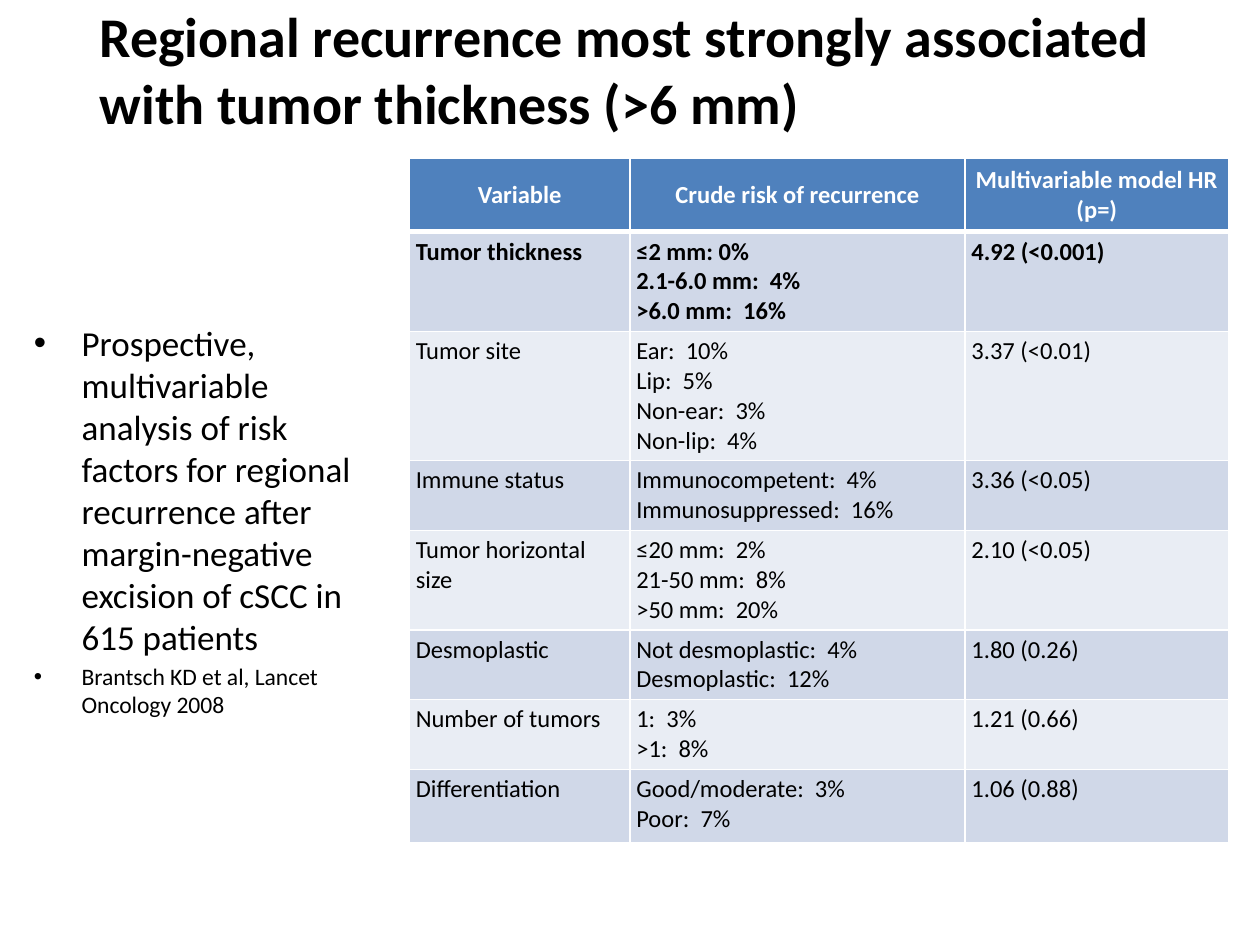
"""Build a slide on regional recurrence and its risk factors."""
from dataclasses import dataclass

from lxml.etree import SubElement
from pptx import Presentation
from pptx.dml.color import RGBColor
from pptx.enum.text import MSO_ANCHOR, MSO_AUTO_SIZE, PP_ALIGN
from pptx.oxml.ns import qn
from pptx.util import Inches, Pt


@dataclass(frozen=True)
class Theme:
    font: str = "Calibri"
    text: str = "000000"
    white: str = "FFFFFF"
    header: str = "4F81BD"
    bands: tuple = ("D0D8E8", "E9EDF4")
    title_size: float = 32
    body_size: float = 20
    citation_size: float = 13.5
    table_size: float = 14


theme = Theme()


def format_runs(paragraph, size, color=theme.text, bold=False):
    for run in paragraph.runs:
        run.font.name = theme.font
        run.font.size = Pt(size)
        run.font.bold = bold
        run.font.color.rgb = RGBColor.from_string(color)


def add_border(cell, position, side, width):
    properties = cell._tc.get_or_add_tcPr()
    line = SubElement(properties, qn(f"a:ln{side}"), w=str(Pt(width)))
    fill = SubElement(line, qn("a:solidFill"))
    SubElement(fill, qn("a:srgbClr"), val=theme.white)
    properties.insert(position, line)


presentation = Presentation()
presentation.slide_width = Inches(10)
presentation.slide_height = Inches(7.5)
slide = presentation.slides.add_slide(presentation.slide_layouts[5])

title = slide.shapes.title
title.left, title.top = Inches(0.69), Inches(0)
title.width, title.height = Inches(8.62), Inches(1.09)
title.text_frame.text = "Regional recurrence most strongly associated with tumor thickness (>6 mm)"
title.text_frame.auto_size = MSO_AUTO_SIZE.NONE
title.text_frame.vertical_anchor = MSO_ANCHOR.MIDDLE
title.text_frame.paragraphs[0].alignment = PP_ALIGN.LEFT
format_runs(title.text_frame.paragraphs[0], theme.title_size, bold=True)

rows = [
    ("Variable", "Crude risk of recurrence", "Multivariable model HR (p=)"),
    ("Tumor thickness", "≤2 mm: 0%\n2.1-6.0 mm:  4%\n>6.0 mm:  16%", "4.92 (<0.001)"),
    ("Tumor site", "Ear:  10%\nLip:  5%\nNon-ear:  3%\nNon-lip:  4%", "3.37 (<0.01)"),
    ("Immune status", "Immunocompetent:  4%\nImmunosuppressed:  16%", "3.36 (<0.05)"),
    ("Tumor horizontal size", "≤20 mm:  2%\n21-50 mm:  8%\n>50 mm:  20%", "2.10 (<0.05)"),
    ("Desmoplastic", "Not desmoplastic:  4%\nDesmoplastic:  12%", "1.80 (0.26)"),
    ("Number of tumors", "1:  3%\n>1:  8%", "1.21 (0.66)"),
    ("Differentiation", "Good/moderate:  3%\nPoor:  7%", "1.06 (0.88)"),
]
column_widths = [1.75, 2.66, 2.09]
row_heights = [0.58, 0.76, 0.98, 0.53, 0.76, 0.53, 0.53, 0.58]

table = slide.shapes.add_table(
    len(rows), len(column_widths), Inches(3.25), Inches(1.26), Inches(6.5), Inches(5.25)
).table
for column, width in zip(table.columns, column_widths):
    column.width = Inches(width)
for row, height in zip(table.rows, row_heights):
    row.height = Inches(height)

for row_index, row_values in enumerate(rows):
    is_header = row_index == 0
    fill_color = theme.header if is_header else theme.bands[(row_index - 1) % 2]
    border_widths = {"L": 1, "R": 1, "T": 3 if row_index == 1 else 1, "B": 3 if is_header else 1}
    for column_index, value in enumerate(row_values):
        cell = table.cell(row_index, column_index)
        cell.text_frame.text = value
        cell.margin_left = cell.margin_right = Inches(0.05)
        cell.margin_top = cell.margin_bottom = Inches(0.04)
        cell.vertical_anchor = MSO_ANCHOR.MIDDLE if is_header else MSO_ANCHOR.TOP
        cell.fill.solid()
        cell.fill.fore_color.rgb = RGBColor.from_string(fill_color)
        for position, (side, width) in enumerate(border_widths.items()):
            add_border(cell, position, side, width)
        for paragraph in cell.text_frame.paragraphs:
            paragraph.alignment = PP_ALIGN.CENTER if is_header else PP_ALIGN.LEFT
            text_color = theme.white if is_header else theme.text
            format_runs(paragraph, theme.table_size, text_color, bold=row_index < 2)

summary = slide.shapes.add_textbox(Inches(0.17), Inches(2.5), Inches(3), Inches(3.57))
summary.text_frame.word_wrap = True
bullets = [
    ("Prospective, multivariable analysis of risk factors for regional recurrence "
     "after margin-negative excision of cSCC in 615 patients", theme.body_size),
    ("Brantsch KD et al, Lancet Oncology 2008", theme.citation_size),
]
summary.text_frame.text = "\n".join(text for text, size in bullets)
for index, (paragraph, (text, size)) in enumerate(zip(summary.text_frame.paragraphs, bullets)):
    properties = paragraph._p.get_or_add_pPr()
    properties.set("marL", str(Inches(0.38)))
    properties.set("indent", str(Inches(-0.38)))
    SubElement(properties, qn("a:buFont"), typeface="Arial")
    SubElement(properties, qn("a:buChar"), char="•")
    if index:
        paragraph.space_before = Pt(0.2 * size)
    format_runs(paragraph, size)

presentation.save("out.pptx")
